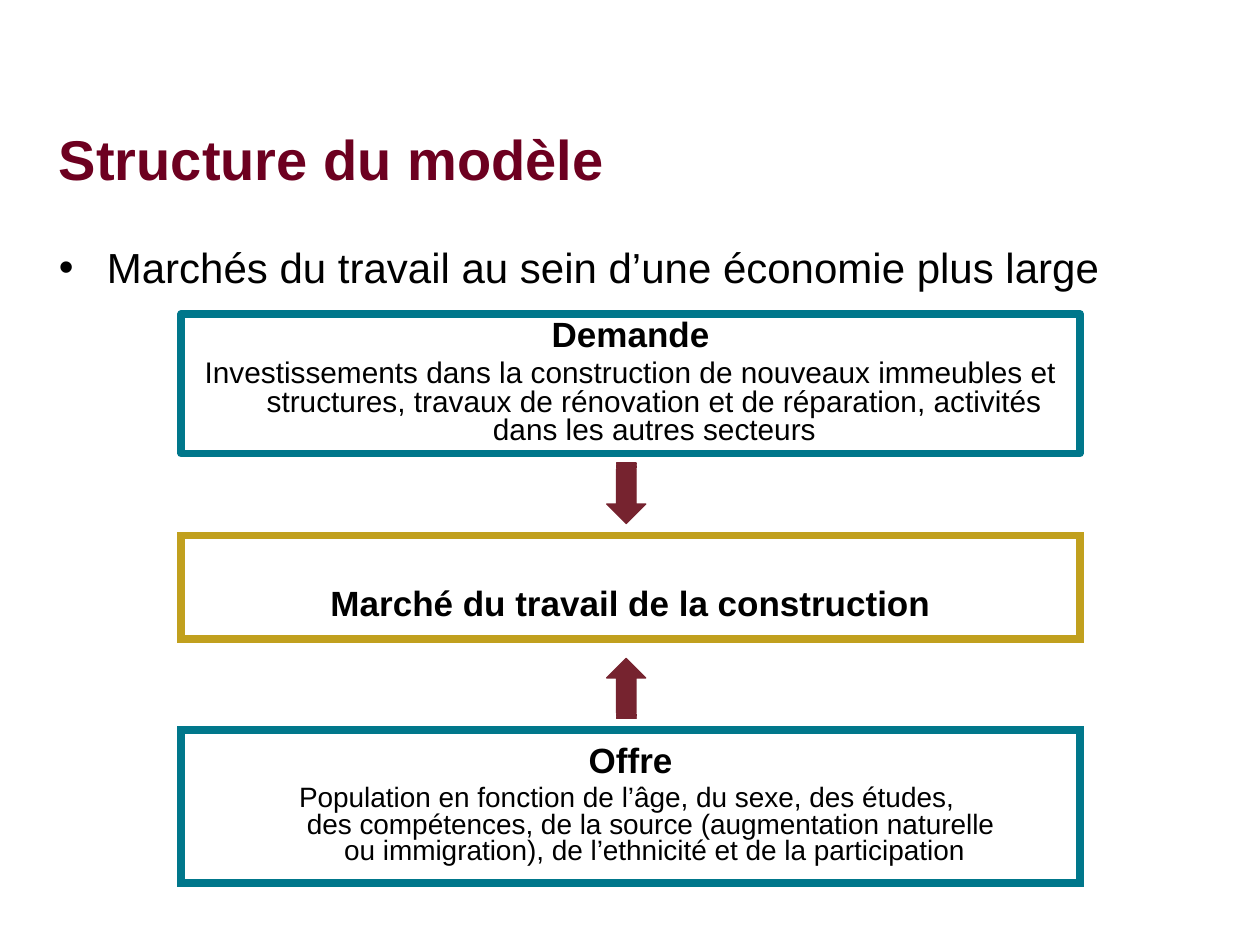
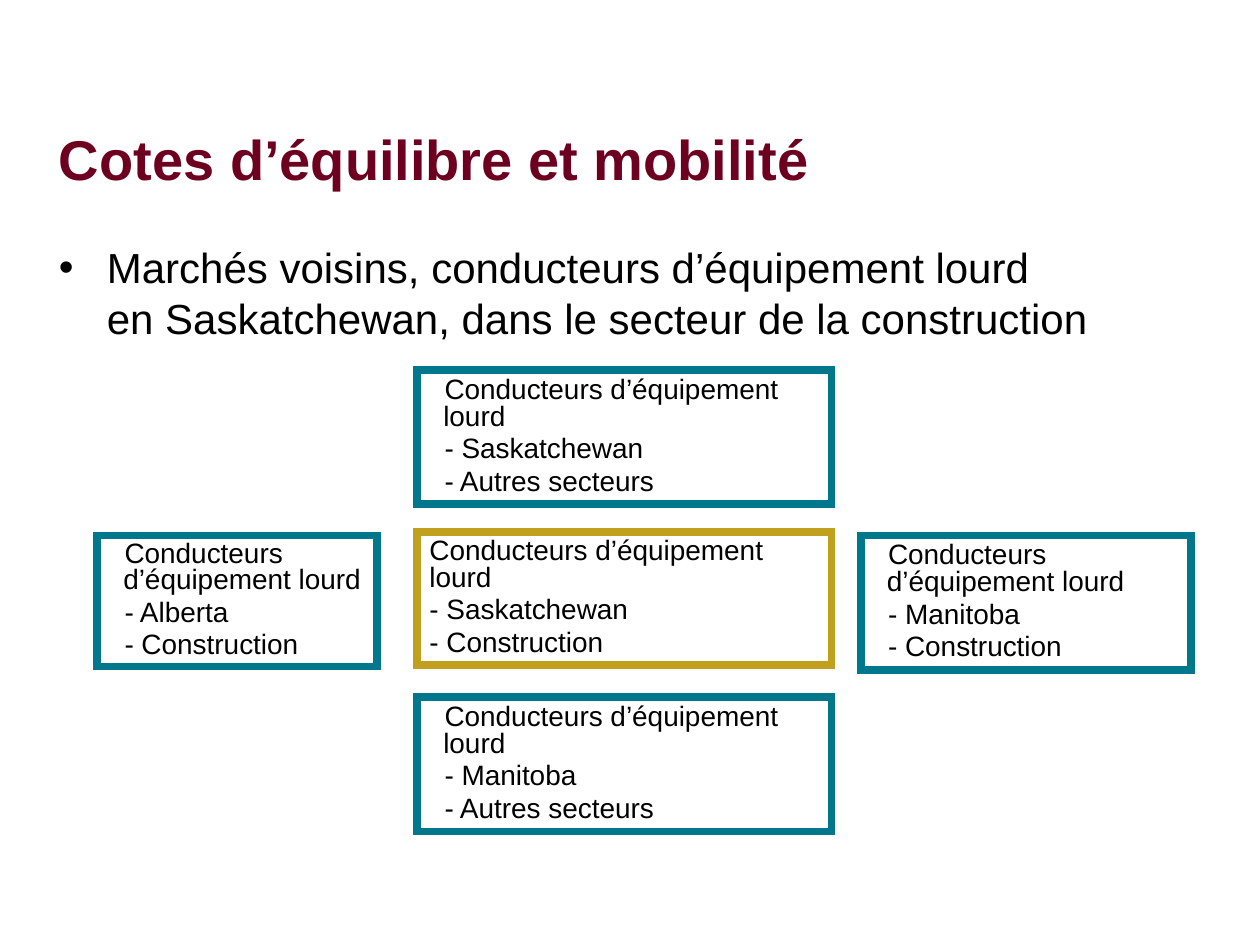
from dataclasses import dataclass

from lxml import etree
from pptx import Presentation
from pptx.dml.color import RGBColor
from pptx.enum.shapes import MSO_SHAPE
from pptx.enum.text import MSO_ANCHOR, PP_ALIGN
from pptx.oxml.ns import qn
from pptx.slide import Slide
from pptx.text.text import TextFrame
from pptx.util import Inches, Pt

RECT, ARROW = MSO_SHAPE.RECTANGLE, MSO_SHAPE.STRIPED_RIGHT_ARROW
MIDDLE, TOP = MSO_ANCHOR.MIDDLE, MSO_ANCHOR.TOP
LEFT, CENTER = PP_ALIGN.LEFT, PP_ALIGN.CENTER


@dataclass(frozen=True)
class Theme:
    font: str = "Arial"
    title: RGBColor = RGBColor(0x6D, 0x00, 0x20)
    text: RGBColor = RGBColor(0, 0, 0)
    paper: RGBColor = RGBColor(0xFF, 0xFF, 0xFF)
    teal: RGBColor = RGBColor(0x00, 0x77, 0x8B)
    gold: RGBColor = RGBColor(0xC1, 0xA0, 0x1E)
    arrow: RGBColor = RGBColor(0x76, 0x23, 0x2F)
    title_size: int = 32
    bullet_size: int = 24
    heading_size: int = 20
    demand_size: int = 17
    body_size: int = 16
    border: float = 4.5
    tight: float = 0.8


THEME = Theme()


@dataclass(frozen=True)
class Para:
    text: str
    size: int = THEME.body_size
    bold: bool = False
    color: RGBColor = THEME.text
    align: PP_ALIGN = LEFT
    margin: float = 0
    indent: float = 0
    spacing: float = THEME.tight
    bullet: str = ""


@dataclass(frozen=True)
class Box:
    left: float
    top: float
    width: float
    height: float
    paras: list[Para]
    color: RGBColor = THEME.teal
    join: str = "miter"
    inset_top: float = 0.05


def write(tf: TextFrame, paras: list[Para], anchor: MSO_ANCHOR) -> None:
    tf.word_wrap = True
    tf.vertical_anchor = anchor
    for i, para in enumerate(paras):
        p = tf.add_paragraph() if i else tf.paragraphs[0]
        p.alignment = para.align
        p.line_spacing = para.spacing
        if i:
            p.space_before = Pt(0.2 * para.size)
        p_pr = p._p.get_or_add_pPr()
        p_pr.set("marL", str(Inches(para.margin)))
        p_pr.set("indent", str(Inches(para.indent)))
        if para.bullet:
            etree.SubElement(p_pr, qn("a:buFont"), typeface=THEME.font)
            etree.SubElement(p_pr, qn("a:buChar"), char=para.bullet)
        for n, line in enumerate(para.text.split("\n")):
            if n:
                p.add_line_break()
            r = p.add_run()
            r.text = line
            r.font.name = THEME.font
            r.font.size = Pt(para.size)
            r.font.bold = para.bold
            r.font.color.rgb = para.color


def add_text(s: Slide, top: float, height: float, para: Para, anchor: MSO_ANCHOR) -> None:
    sp = s.shapes.add_textbox(Inches(0.37), Inches(top), Inches(9), Inches(height))
    write(sp.text_frame, [para], anchor)


def add_page(prs: Presentation, title: str, bullet: str) -> Slide:
    s = prs.slides.add_slide(prs.slide_layouts[6])
    add_text(s, 0.63, 1.25,
             Para(title, THEME.title_size, True, THEME.title, spacing=1), MIDDLE)
    add_text(s, 1.87, 4.95,
             Para(bullet, THEME.bullet_size, margin=0.38, indent=-0.38,
                  spacing=1, bullet="•"), TOP)
    return s


def add_box(s: Slide, box: Box) -> None:
    sp = s.shapes.add_shape(RECT, Inches(box.left), Inches(box.top),
                            Inches(box.width), Inches(box.height))
    sp.shadow.inherit = False
    sp.fill.solid()
    sp.fill.fore_color.rgb = THEME.paper
    sp.line.color.rgb = box.color
    sp.line.width = Pt(THEME.border)
    etree.SubElement(sp.line._get_or_add_ln(), qn(f"a:{box.join}"))
    sp.text_frame.margin_top = Inches(box.inset_top)
    write(sp.text_frame, box.paras, MIDDLE)


def add_arrow(s: Slide, top: float, rotation: int) -> None:
    sp = s.shapes.add_shape(ARROW, Inches(4.73), Inches(top), Inches(0.48), Inches(0.31))
    sp.rotation = rotation
    sp.shadow.inherit = False
    sp.fill.solid()
    sp.fill.fore_color.rgb = THEME.arrow
    sp.line.color.rgb = THEME.arrow
    sp.line.width = Pt(0.75)


def centred(text: str, size: int, bold: bool = False) -> Para:
    return Para(text, size, bold, align=CENTER, margin=0.38, indent=-0.38)


def heading(text: str) -> Para:
    return centred(text, THEME.heading_size, True)


def market(place: str, sector: str, margin: float = 0.11, indent: float = 0.01) -> list[Para]:
    lines = ("Conducteurs d’équipement lourd", f"- {place}", f"- {sector}")
    return [Para(line, margin=margin, indent=indent) for line in lines]


def build_model(prs: Presentation) -> None:
    s = add_page(prs, "Structure du modèle",
                 "Marchés du travail au sein d’une économie plus large")
    left, width = 1.44, 7.13
    demand = [heading("Demande"),
              centred("Investissements dans la construction de nouveaux immeubles et "
                      "structures, travaux de rénovation et de réparation, activités "
                      "dans les autres secteurs", THEME.demand_size)]
    supply = [heading("Offre"),
              centred("Population en fonction de l’âge, du sexe, des études, \n"
                      "des compétences, de la source (augmentation naturelle \n"
                      "ou immigration), de l’ethnicité et de la participation",
                      THEME.body_size)]
    labour = [heading("Marché du travail de la construction")]
    add_box(s, Box(left, 2.49, width, 1.11, demand, join="round"))
    add_arrow(s, 3.76, 90)
    add_box(s, Box(left, 4.25, width, 0.82, labour, THEME.gold, inset_top=0.35))
    add_arrow(s, 5.31, 270)
    add_box(s, Box(left, 5.79, width, 1.22, supply))


def build_mobility(prs: Presentation) -> None:
    s = add_page(prs, "Cotes d’équilibre et mobilité",
                 "Marchés voisins, conducteurs d’équipement lourd \n"
                 "en Saskatchewan, dans le secteur de la construction")
    mid, mid_width = 3.31, 3.29
    other, construction = "Autres secteurs", "Construction"
    for box in (
        Box(mid, 2.94, mid_width, 1.06, market("Saskatchewan", other)),
        Box(0.77, 4.25, 2.22, 1.04, market("Alberta", construction)),
        Box(mid, 4.22, mid_width, 1.06, market("Saskatchewan", construction, 0, 0),
            THEME.gold),
        Box(6.83, 4.25, 2.62, 1.07, market("Manitoba", construction)),
        Box(mid, 5.53, mid_width, 1.07, market("Manitoba", other)),
    ):
        add_box(s, box)


def main() -> None:
    prs = Presentation()
    prs.slide_width, prs.slide_height = Inches(10), Inches(7.5)
    build_model(prs)
    build_mobility(prs)
    prs.save("out.pptx")


if __name__ == "__main__":
    main()
